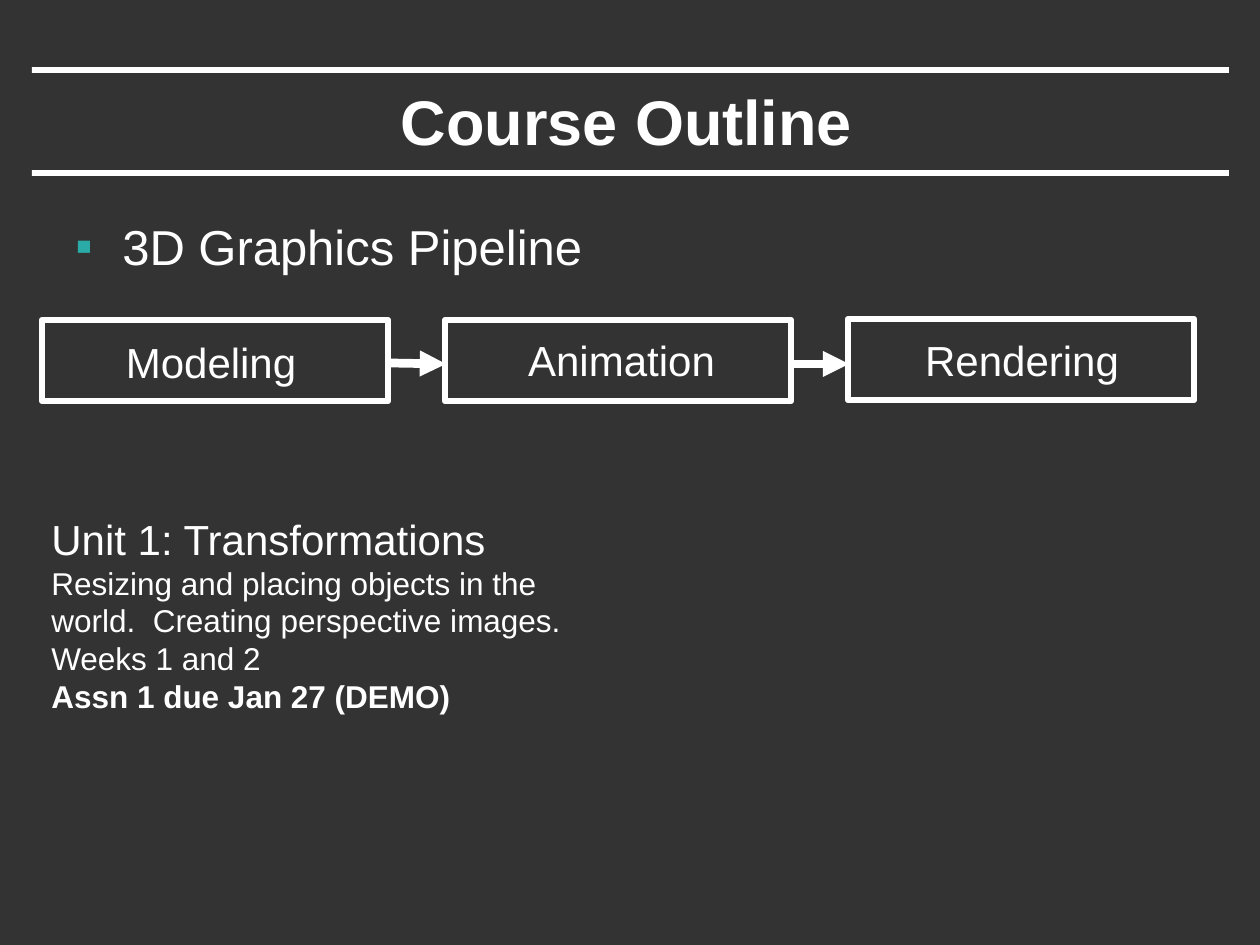
import dataclasses

import pptx
import pptx.dml.color
import pptx.enum.shapes
import pptx.enum.text
import pptx.oxml
import pptx.oxml.ns
import pptx.util

SCALE = 914400 / 126  # EMU per px
COLORS = {"back": "333333", "ink": "FFFFFF", "mark": "2AABA8"}
FONT = "Arial"
ALIGN = pptx.enum.text.PP_ALIGN
ANCHOR = pptx.enum.text.MSO_ANCHOR
RECT = pptx.enum.shapes.MSO_SHAPE.RECTANGLE


@dataclasses.dataclass
class Area:
    left: int
    top: int
    width: int
    height: int

    def emu(self) -> list[int]:
        return [px(n) for n in dataclasses.astuple(self)]


@dataclasses.dataclass
class Line:
    text: str
    size: int
    bold: bool = False


@dataclasses.dataclass
class Stage:
    name: str
    box: Area
    label: Area


@dataclasses.dataclass
class Arrow:
    start: tuple[int, int]
    end: tuple[int, int]


def px(n: int) -> int:
    return round(n * SCALE)


def color(name: str):
    return pptx.dml.color.RGBColor.from_string(COLORS[name])


def add_xml(parent, tag: str, attrs: str = "", inner: str = "") -> None:
    space = pptx.oxml.ns.nsdecls("a")
    parent.append(pptx.oxml.parse_xml(f"<a:{tag} {space} {attrs}>{inner}</a:{tag}>"))


def add_bar(slide, area: Area) -> None:
    bar = slide.shapes.add_shape(RECT, *area.emu())
    bar.shadow.inherit = False
    bar.fill.solid()
    bar.fill.fore_color.rgb = color("ink")
    bar.line.fill.background()


def add_frame(slide, area: Area) -> None:
    box = slide.shapes.add_shape(RECT, *area.emu())
    box.shadow.inherit = False
    box.fill.background()
    box.line.color.rgb = color("ink")
    box.line.width = pptx.util.Pt(3.75)


def add_text(slide, area: Area, lines: list[Line], align=ALIGN.LEFT,
             anchor=ANCHOR.TOP, wrap: bool = False):
    frame = slide.shapes.add_textbox(*area.emu()).text_frame
    frame.word_wrap = wrap
    frame.vertical_anchor = anchor
    frame.text = "\n".join(line.text for line in lines)
    for para, line in zip(frame.paragraphs, lines):
        para.alignment = align
        for run in para.runs:
            run.font.name = FONT
            run.font.size = pptx.util.Pt(line.size)
            run.font.bold = line.bold
            run.font.color.rgb = color("ink")
    return frame


def add_bullet(para) -> None:
    para.space_before = pptx.util.Pt(3)
    props = para._p.get_or_add_pPr()
    props.set("marL", str(px(47)))
    props.set("indent", str(-px(47)))
    add_xml(props, "buClr", inner=f'<a:srgbClr val="{COLORS["mark"]}"/>')
    add_xml(props, "buFont", f'typeface="{FONT}"')
    add_xml(props, "buChar", 'char="▪"')


def add_arrow(slide, arrow: Arrow) -> None:
    ends = [px(n) for n in arrow.start + arrow.end]
    link = slide.shapes.add_connector(
        pptx.enum.shapes.MSO_CONNECTOR.STRAIGHT, *ends)
    link.line.color.rgb = color("ink")
    link.line.width = pptx.util.Pt(5)
    add_xml(link.line._get_or_add_ln(), "tailEnd", 'type="triangle"')
    add_xml(link._element.spPr, "effectLst")


BARS = [Area(32, top, 1197, 6) for top in (170, 67)]
STAGES = [
    Stage("Modeling", Area(42, 320, 346, 81), Area(112, 330, 198, 63)),
    Stage("Animation", Area(445, 320, 346, 81), Area(514, 328, 215, 63)),
    Stage("Rendering", Area(848, 319, 346, 81), Area(911, 328, 222, 63)),
]
ARROWS = [Arrow((793, 364), (849, 364)), Arrow((389, 363), (446, 364))]
UNIT = [
    Line("Unit 1: Transformations", 24),
    Line("Resizing and placing objects in the", 18),
    Line("world.  Creating perspective images.", 18),
    Line("Weeks 1 and 2", 18),
    Line("Assn 1 due Jan 27 (DEMO)", 18, True),
]


def main() -> None:
    deck = pptx.Presentation()
    deck.slide_width, deck.slide_height = px(1260), px(945)
    slide = deck.slides.add_slide(deck.slide_layouts[6])
    slide.background.fill.solid()
    slide.background.fill.fore_color.rgb = color("back")

    # Title between two bars
    for bar in BARS:
        add_bar(slide, bar)
    add_text(slide, Area(93, 73, 1067, 95), [Line("Course Outline", 36, True)],
             ALIGN.CENTER, ANCHOR.MIDDLE, True)

    # Topic and unit details
    topic = add_text(slide, Area(63, 210, 1134, 693),
                     [Line("3D Graphics Pipeline", 28)], wrap=True)
    add_bullet(topic.paragraphs[0])
    add_text(slide, Area(39, 507, 542, 217), UNIT)

    # Pipeline
    for stage in STAGES:
        add_frame(slide, stage.box)
    for arrow in ARROWS:
        add_arrow(slide, arrow)
    for stage in STAGES:
        add_text(slide, stage.label, [Line(stage.name, 24)], ALIGN.CENTER)

    deck.save("out.pptx")


if __name__ == "__main__":
    main()
